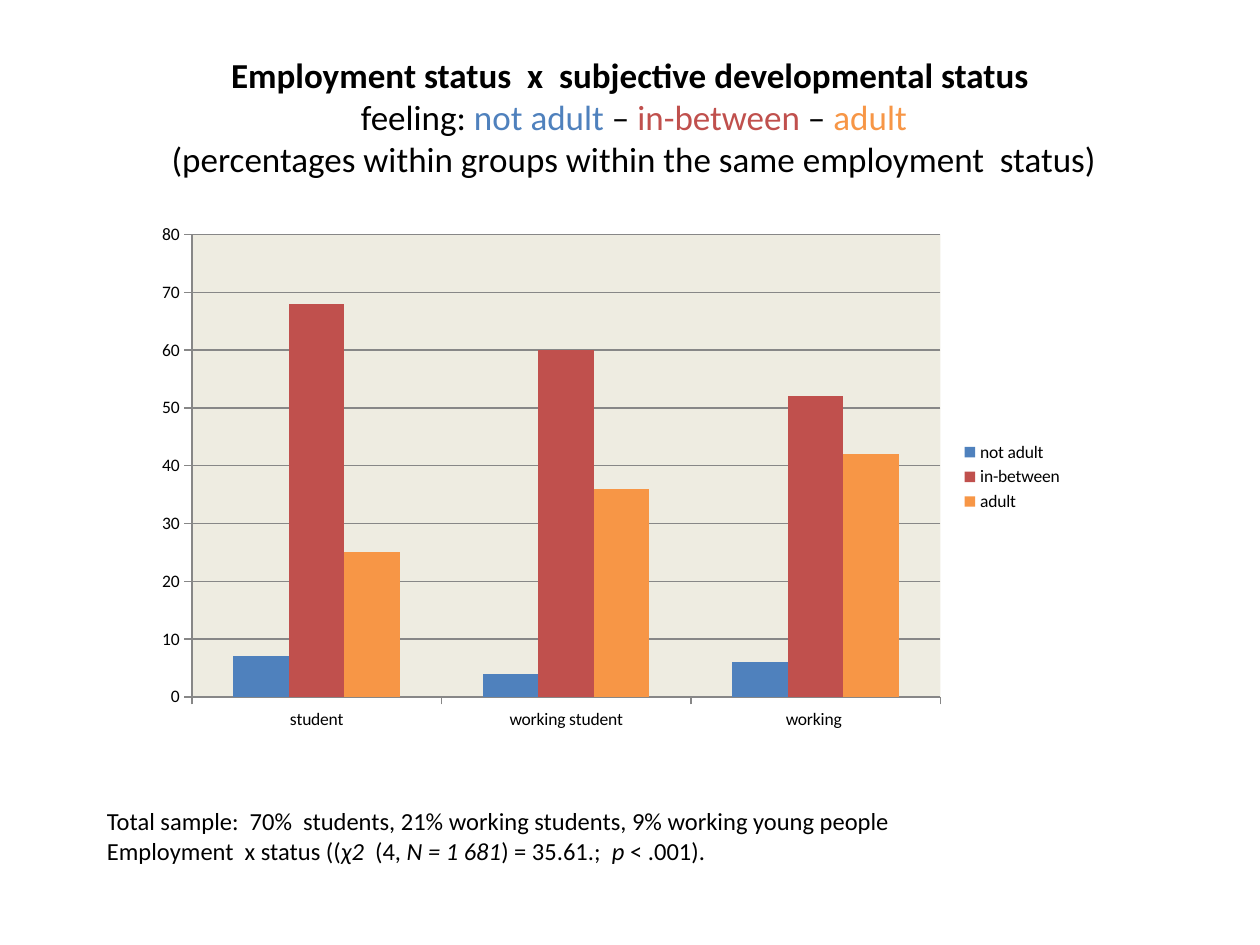
"""Build a slide charting subjective developmental status by employment status."""
from lxml import etree
from pptx import Presentation
from pptx.chart.data import CategoryChartData
from pptx.dml.color import RGBColor
from pptx.enum.chart import XL_CHART_TYPE, XL_LEGEND_POSITION, XL_TICK_MARK
from pptx.enum.text import MSO_ANCHOR, PP_ALIGN
from pptx.oxml import parse_xml
from pptx.oxml.ns import nsdecls
from pptx.util import Pt

CLUSTERED = XL_CHART_TYPE.COLUMN_CLUSTERED
LEGEND_RIGHT = XL_LEGEND_POSITION.RIGHT
TICK_OUT = XL_TICK_MARK.OUTSIDE
MIDDLE = MSO_ANCHOR.MIDDLE
CENTER = PP_ALIGN.CENTER
LEFT = PP_ALIGN.LEFT

FONT = "Calibri"
COLORS = {
    "text": "000000",
    "not adult": "4F81BD",
    "in-between": "C0504D",
    "adult": "F79646",
    "plot": "EEECE1",
    "axis": "878787",
}


def write(paragraph, text, size=14, color="text", bold=False, italic=False):
    run = paragraph.add_run()
    run.text = text
    run.font.name = FONT
    run.font.size = Pt(size)
    run.font.bold = bold
    run.font.italic = italic
    run.font.color.rgb = RGBColor.from_string(COLORS[color])


presentation = Presentation()
presentation.slide_width, presentation.slide_height = Pt(720), Pt(540)
slide = presentation.slides.add_slide(presentation.slide_layouts[5])

heading = slide.shapes.title
heading.left, heading.top, heading.width, heading.height = Pt(36), Pt(21.6), Pt(648), Pt(90)
heading.text_frame.vertical_anchor = MIDDLE
heading.text_frame.word_wrap = True
heading_text = heading.text_frame.paragraphs[0]
heading_text.alignment = CENTER
heading_lines = [
    [("Employment status  x  subjective developmental status", "text", True)],
    [
        (" feeling:", "text", False),
        (" not adult ", "not adult", False),
        ("– ", "text", False),
        ("in-between", "in-between", False),
        (" – ", "text", False),
        ("adult", "adult", False),
    ],
    [(" (percentages within groups within the same employment  status)", "text", False)],
]
for number, line in enumerate(heading_lines):
    if number:
        heading_text.add_line_break()
    for text, color, bold in line:
        write(heading_text, text, size=20, color=color, bold=bold)

percentages = CategoryChartData()
percentages.categories = ["student", "working student", "working "]
percentages.add_series("not adult", [7, 4, 6])
percentages.add_series("in-between", [68, 60, 52])
percentages.add_series("adult", [25, 36, 42])
chart = slide.shapes.add_chart(
    CLUSTERED, Pt(82), Pt(122.4), Pt(532.8), Pt(300.2), percentages
).chart
chart.has_title = False
chart.font.name = FONT
chart.font.size = Pt(10)
chart.font.color.rgb = RGBColor.from_string(COLORS["text"])
chart.has_legend = True
chart.legend.position = LEGEND_RIGHT
chart.legend.include_in_layout = False

columns = chart.plots[0]
columns.gap_width = 150
columns.overlap = 0
columns.vary_by_categories = False
for status in columns.series:
    status.format.fill.solid()
    status.format.fill.fore_color.rgb = RGBColor.from_string(COLORS[status.name])

chart.value_axis.minimum_scale = 0
chart.value_axis.maximum_scale = 80
chart.value_axis.major_unit = 10
chart.value_axis.has_major_gridlines = True
for axis in (chart.category_axis, chart.value_axis):
    axis.major_tick_mark = TICK_OUT
for ruled in (chart.category_axis, chart.value_axis, chart.value_axis.major_gridlines):
    ruled.format.line.width = Pt(0.75)
    ruled.format.line.color.rgb = RGBColor.from_string(COLORS["axis"])

plot_format = parse_xml(f"<c:spPr {nsdecls('c', 'a')}/>")
plot_fill = etree.SubElement(plot_format, f"{{{plot_format.nsmap['a']}}}solidFill")
etree.SubElement(plot_fill, f"{{{plot_format.nsmap['a']}}}srgbClr", val=COLORS["plot"])
chart.plots[0]._element.getparent().append(plot_format)

sample_note = slide.shapes.add_textbox(Pt(54), Pt(457.2), Pt(601.2), Pt(41)).text_frame
sample_note.word_wrap = True
note_lines = [
    [("Total sample:  70%  students, 21% working students, 9% working young people", False)],
    [
        ("Employment  x status ((", False),
        ("χ2  ", True),
        ("(4, ", False),
        ("N = 1 681", True),
        (") = 35.61.;  ", False),
        ("p", True),
        (" < .001).", False),
    ],
]
for number, line in enumerate(note_lines):
    note_text = sample_note.add_paragraph() if number else sample_note.paragraphs[0]
    note_text.alignment = LEFT
    for text, italic in line:
        write(note_text, text, italic=italic)

presentation.save("out.pptx")
